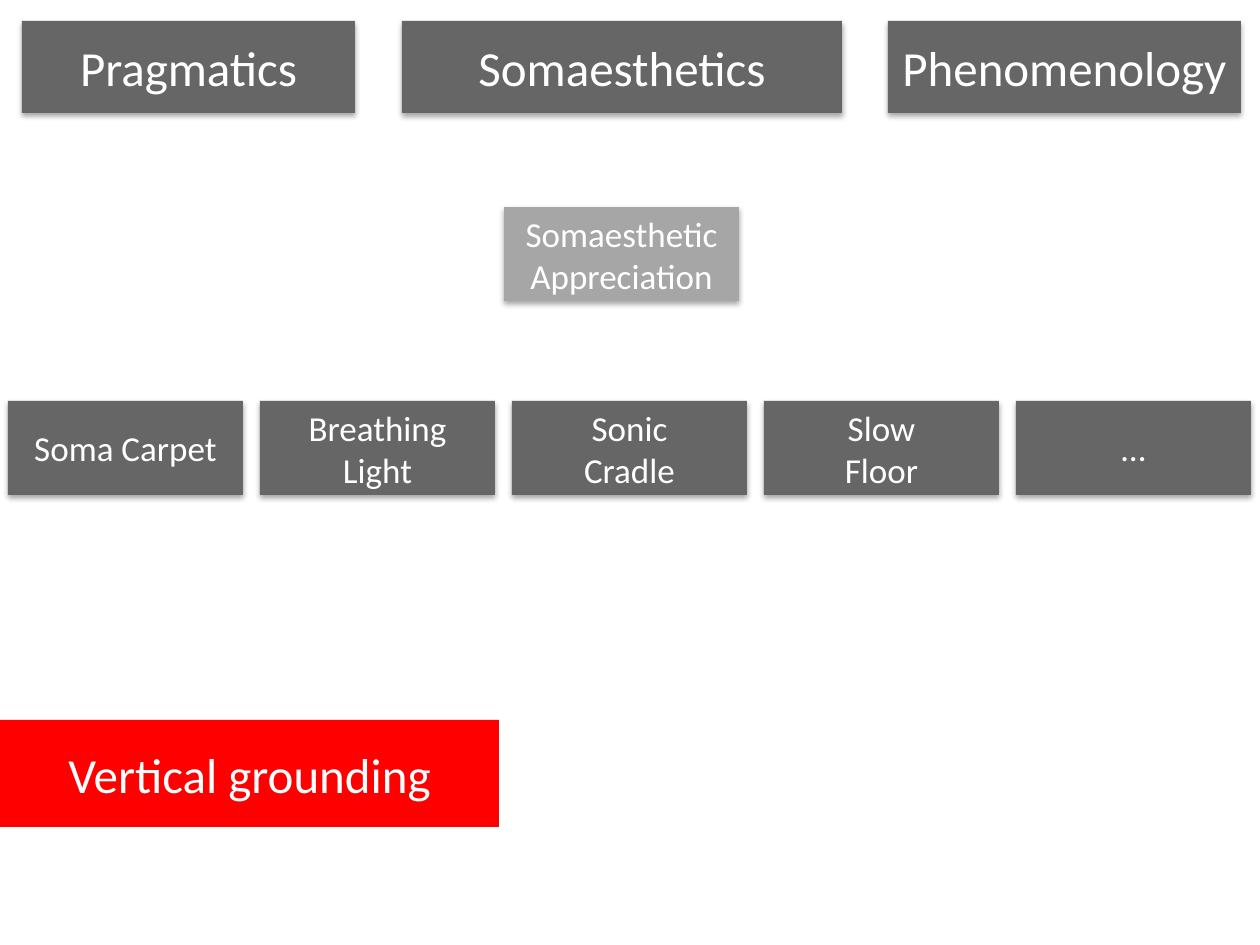
from lxml.etree import SubElement
from pptx import Presentation
from pptx.dml.color import RGBColor
from pptx.enum.shapes import MSO_SHAPE as Shape
from pptx.enum.text import MSO_ANCHOR as Anchor, PP_ALIGN as Align
from pptx.oxml.ns import qn
from pptx.util import Emu, Pt

PX = 914400 // 126
WHITE = RGBColor(0xFF, 0xFF, 0xFF)
DARK = RGBColor(0x66, 0x66, 0x66)
LIGHT = RGBColor(0xA6, 0xA6, 0xA6)
RED = RGBColor(0xFF, 0x00, 0x00)

deck = Presentation()
deck.slide_width = Emu(1260 * PX)
deck.slide_height = Emu(945 * PX)
slide = deck.slides.add_slide(deck.slide_layouts[6])


def add_box(x, y, w, h, lines, fill, size):
    """Add a filled box with one centred paragraph for each line."""
    box = slide.shapes.add_shape(
        Shape.RECTANGLE, *(Emu(n * PX) for n in (x, y, w, h)))
    box.shadow.inherit = False
    box.fill.solid()
    box.fill.fore_color.rgb = fill
    box.line.fill.background()
    frame = box.text_frame
    frame.word_wrap = True
    frame.vertical_anchor = Anchor.MIDDLE
    for i, line in enumerate(lines):
        para = frame.add_paragraph() if i else frame.paragraphs[0]
        para.alignment = Align.CENTER
        run = para.add_run()
        run.text = line
        run.font.name = "Calibri"
        run.font.size = Pt(size)
        run.font.color.rgb = WHITE
    return box


def add_shadow(box):
    effects = box.element.spPr.find(qn("a:effectLst"))
    shade = SubElement(effects, qn("a:outerShdw"), blurRad="40000",
                       dist="23000", dir="5400000", rotWithShape="0")
    color = SubElement(shade, qn("a:srgbClr"), val="000000")
    SubElement(color, qn("a:alpha"), val="35000")


add_box(0, 720, 499, 107, ["Vertical grounding"], RED, 28)

add_shadow(add_box(504, 207, 235, 94, ["Somaesthetic", "Appreciation"],
                   LIGHT, 20))

works = [["Soma Carpet"], ["Breathing", "Light"], ["Sonic", "Cradle"],
         ["Slow", "Floor"], ["…"]]
for i, lines in enumerate(works):
    add_shadow(add_box(8 + 252 * i, 401, 235, 94, lines, DARK, 20))

fields = [("Pragmatics", 22, 333), ("Somaesthetics", 402, 440),
          ("Phenomenology", 888, 353)]
for name, x, w in fields:
    add_shadow(add_box(x, 21, w, 92, [name], DARK, 28))

deck.save("out.pptx")
